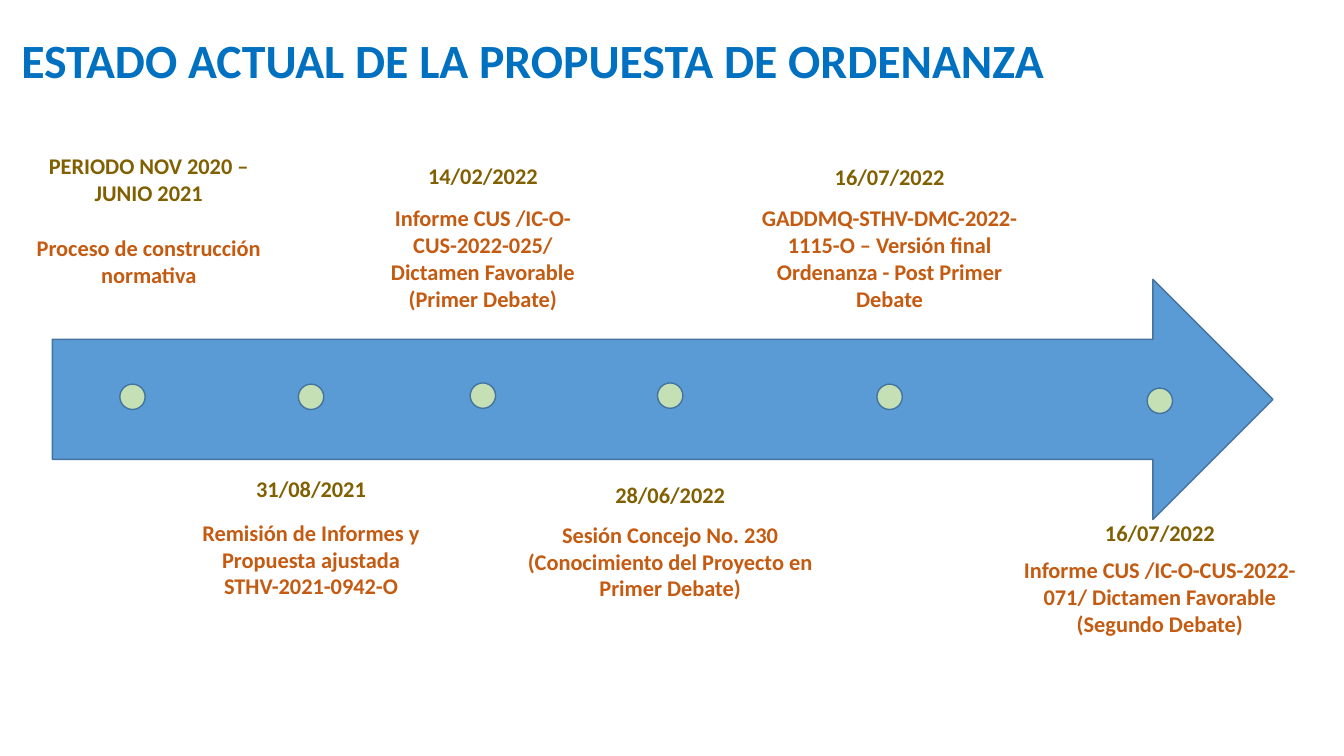
from pptx import Presentation
from pptx.dml.color import RGBColor
from pptx.enum.shapes import MSO_SHAPE
from pptx.enum.text import MSO_ANCHOR, MSO_AUTO_SIZE, PP_ALIGN
from pptx.util import Cm, Pt

ARROW, DOT = MSO_SHAPE.RIGHT_ARROW, MSO_SHAPE.OVAL
TOP, CENTER, FIXED = MSO_ANCHOR.TOP, PP_ALIGN.CENTER, MSO_AUTO_SIZE.NONE

COLORS = {
    "title": "0070C0",
    "date": "806000",
    "event": "C55A11",
    "arrow": "5B9BD5",
    "dot": "C5E0B4",
    "edge": "43739E",
}
FRAME = {"word_wrap": True, "auto_size": FIXED, "vertical_anchor": TOP}
HEAD = {"name": "Calibri", "size": Pt(34.1), "bold": True}
LABEL = {"name": "Calibri", "size": Pt(16), "bold": True}
DOT_SIZE = 0.64

# center, dot x, dot y, (date, top, width, lines), (event, top, width, lines)
STEPS = [
    (3.75, 3.34, 10,
     ("PERIODO NOV 2020 – JUNIO 2021", 3.71, 6.48, 2),
     ("Proceso de construcción normativa", 5.77, 6.93, 2)),
    (7.84, 7.84, 10,
     ("31/08/2021", 11.86, 7.39, 1),
     ("Remisión de Informes y Propuesta ajustada\nSTHV-2021-0942-O",
      12.95, 6.73, 3)),
    (12.17, 12.17, 9.97,
     ("14/02/2022", 3.96, 7.39, 1),
     ("Informe CUS /IC-O-CUS-2022-025/ Dictamen Favorable (Primer Debate)",
      5.03, 5.77, 4)),
    (16.89, 16.89, 9.97,
     ("28/06/2022", 12.01, 7.39, 1),
     ("Sesión Concejo No. 230\n(Conocimiento del Proyecto en Primer Debate)",
      13, 7.92, 3)),
    (22.42, 22.42, 10,
     ("16/07/2022", 3.99, 7.39, 1),
     ("GADDMQ-STHV-DMC-2022-1115-O – Versión final Ordenanza"
      " - Post Primer Debate", 5.03, 7.92, 4)),
    (29.23, 29.23, 10.1,
     ("16/07/2022", 12.95, 7.39, 1),
     ("Informe CUS /IC-O-CUS-2022-071/ Dictamen Favorable (Segundo Debate)",
      13.89, 7.92, 3)),
]


def color(name):
    return RGBColor.from_string(COLORS[name])


def apply(target, values):
    for key, value in values.items():
        setattr(target, key, value)


def write(frame, text, style, tint):
    apply(frame, FRAME)
    frame.text = text
    for para in frame.paragraphs:
        para.alignment = CENTER
        for run in para.runs:
            apply(run.font, style)
            run.font.color.rgb = color(tint)


def add_title(slide, text):
    title = slide.shapes.title
    apply(title, {"left": Cm(0), "top": Cm(1.04),
                  "width": Cm(26.85), "height": Cm(2.18)})
    write(title.text_frame, text, HEAD, "title")
    title.text_frame.paragraphs[0].line_spacing = 0.7


def add_shape(slide, kind, fill, *box):
    shape = slide.shapes.add_shape(kind, *map(Cm, box))
    shape.shadow.inherit = False
    shape.fill.solid()
    shape.fill.fore_color.rgb = color(fill)
    shape.line.color.rgb = color("edge")
    shape.line.width = Pt(1)


def add_label(slide, center, label, tint):
    text, top, width, lines = label
    height = 0.25 + 0.69 * lines
    box = slide.shapes.add_textbox(
        *map(Cm, (center - width / 2, top, width, height)))
    write(box.text_frame, text, LABEL, tint)


def add_step(slide, center, dot_x, dot_y, date, event):
    half = DOT_SIZE / 2
    add_shape(slide, DOT, "dot", dot_x - half, dot_y - half,
              DOT_SIZE, DOT_SIZE)
    add_label(slide, center, date, "date")
    add_label(slide, center, event, "event")


def main():
    deck = Presentation()
    apply(deck, {"slide_width": Cm(33.87), "slide_height": Cm(19.05)})
    slide = deck.slides.add_slide(deck.slide_layouts[5])
    add_title(slide, "ESTADO ACTUAL DE LA PROPUESTA DE ORDENANZA")
    add_shape(slide, ARROW, "arrow", 1.32, 7.04, 30.76, 6.05)
    for step in STEPS:
        add_step(slide, *step)
    deck.save("out.pptx")


if __name__ == "__main__":
    main()
